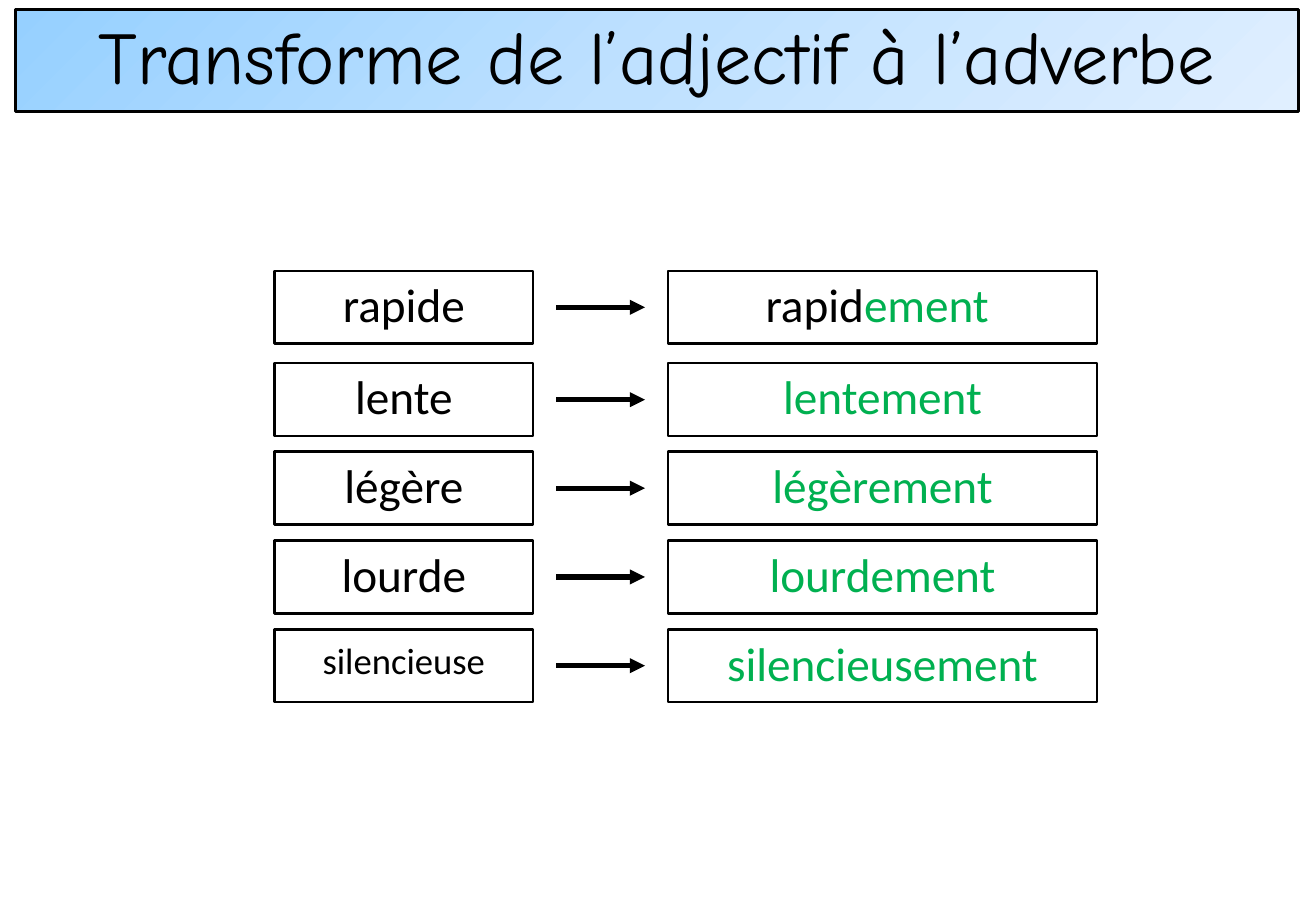
from copy import deepcopy

from lxml import etree
from pptx import Presentation
from pptx.dml.color import RGBColor
from pptx.enum.shapes import MSO_CONNECTOR, MSO_SHAPE
from pptx.enum.text import MSO_ANCHOR, PP_ALIGN
from pptx.oxml.ns import qn
from pptx.util import Pt

RECTANGLE = MSO_SHAPE.RECTANGLE
STRAIGHT = MSO_CONNECTOR.STRAIGHT
MIDDLE = MSO_ANCHOR.MIDDLE
CENTER = PP_ALIGN.CENTER

COLORS = {
    "black": "000000",
    "green": "00B050",
    "sky": "96D0FF",
    "pale": "BFE1FF",
    "mist": "E0EFFF",
}
TITLE_FONT = "Comic Neue"
WORD_FONT = "Calibri"

ADJECTIVE_LEFT, ADJECTIVE_WIDTH = 162.72, 153.36
ADVERB_LEFT, ADVERB_WIDTH = 396, 254.16
ARROW_START, ARROW_END = 329.76, 382.32
BOX_HEIGHT = 43.2

ROWS = [
    (160.6, "rapide", [("rapid", "black"), ("ement ", "green")]),
    (215.3, "lente", [("lentement", "green")]),
    (267.8, "légère", [("légèrement", "green")]),
    (320.4, "lourde", [("lourdement", "green")]),
    (373, "silencieuse", [("silencieusement", "green")]),
]
SMALL_WORDS = {"silencieuse": (21.7, 0.7)}


class SlideBuilder:
    def __init__(self, slide):
        self.slide = slide

    def color(self, name):
        return RGBColor.from_string(COLORS[name])

    def box(self, left, top, width, height, runs, font=WORD_FONT, size=28, spacing=0.9, before=10):
        shape = self.slide.shapes.add_shape(RECTANGLE, Pt(left), Pt(top), Pt(width), Pt(height))
        shape.shadow.inherit = False
        shape.fill.background()
        shape.line.color.rgb = self.color("black")
        shape.line.width = Pt(1.5)
        shape.text_frame.word_wrap = True
        shape.text_frame.vertical_anchor = MIDDLE
        paragraph = shape.text_frame.paragraphs[0]
        paragraph.alignment = CENTER
        paragraph.line_spacing = spacing
        paragraph.space_before = Pt(before)
        for text, color in runs:
            run = paragraph.add_run()
            run.text = text
            run.font.name = font
            run.font.size = Pt(size)
            run.font.color.rgb = self.color(color)
        return shape

    def title(self, left, top, width, height, text):
        shape = self.box(left, top, width, height, [(text, "black")], TITLE_FONT, 44, before=0)
        shape.fill.gradient()
        shape.fill.gradient_angle = 315
        stop_list = shape._element.spPr.find(".//" + qn("a:gsLst"))
        stop_list.insert(1, deepcopy(stop_list[0]))
        gradient = zip(shape.fill.gradient_stops, (0, 0.5, 1), ("sky", "pale", "mist"))
        for stop, position, color in gradient:
            stop.position = position
            stop.color.rgb = self.color(color)

    def arrow(self, start, end, height):
        connector = self.slide.shapes.add_connector(STRAIGHT, Pt(start), Pt(height), Pt(end), Pt(height))
        connector.line.color.rgb = self.color("black")
        connector.line.width = Pt(3)
        line = connector.line._get_or_add_ln()
        etree.SubElement(line, qn("a:tailEnd"), type="triangle")
        etree.SubElement(connector._element.spPr, qn("a:effectLst"))


def main():
    presentation = Presentation()
    presentation.slide_width = Pt(780)
    presentation.slide_height = Pt(540)
    builder = SlideBuilder(presentation.slides.add_slide(presentation.slide_layouts[6]))
    builder.title(9.36, 5.76, 760.3, 60.5, "Transforme de l’adjectif à l’adverbe")
    for top, adjective, adverb in ROWS:
        size, spacing = SMALL_WORDS.get(adjective, (28, 0.9))
        builder.box(ADJECTIVE_LEFT, top, ADJECTIVE_WIDTH, BOX_HEIGHT,
                    [(adjective, "black")], size=size, spacing=spacing)
        builder.arrow(ARROW_START, ARROW_END, top + BOX_HEIGHT / 2)
        builder.box(ADVERB_LEFT, top, ADVERB_WIDTH, BOX_HEIGHT, adverb)
    presentation.save("out.pptx")


if __name__ == "__main__":
    main()
